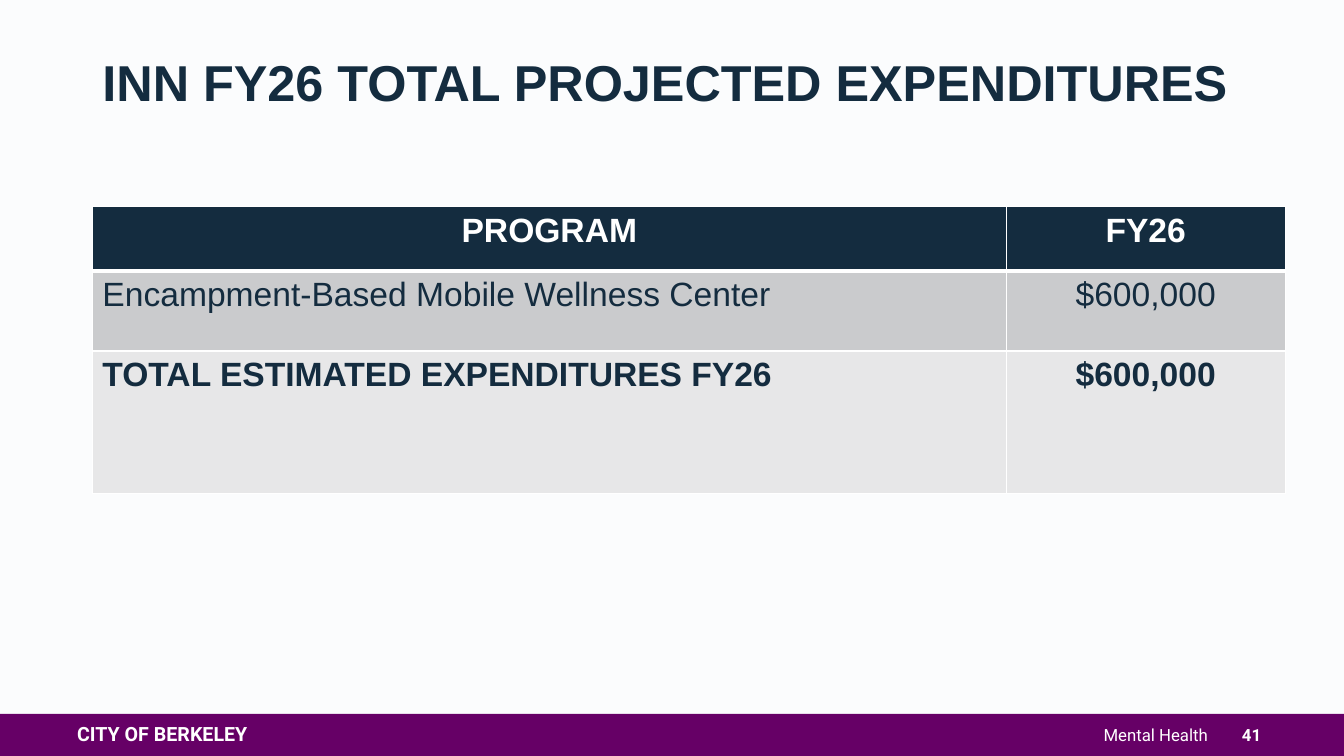
from dataclasses import dataclass

import lxml.etree
import pptx
import pptx.dml.color
import pptx.enum.shapes
import pptx.enum.text
import pptx.oxml.ns
import pptx.util

# The slide is a grid of 160 columns by 90 rows of square units.
UNIT = pptx.util.Inches(1) / 12
COLUMNS, ROWS = 160, 90

NAVY, PURPLE, WHITE = "142C3F", "660066", "FFFFFF"
BACKGROUND = "FBFCFD"
LEFT, CENTER, RIGHT = (
    pptx.enum.text.PP_ALIGN.LEFT,
    pptx.enum.text.PP_ALIGN.CENTER,
    pptx.enum.text.PP_ALIGN.RIGHT,
)
MIDDLE = pptx.enum.text.MSO_ANCHOR.MIDDLE
TOP = pptx.enum.text.MSO_ANCHOR.TOP


@dataclass(frozen=True)
class Box:
    """A rectangle in grid units."""
    col: float
    row: float
    width: float
    height: float

    def emu(self) -> tuple[int, ...]:
        return tuple(grid(n) for n in (self.col, self.row, self.width, self.height))


@dataclass(frozen=True)
class Style:
    size: float
    font: str = "Arial"
    color: str = NAVY
    bold: bool = False
    align: pptx.enum.text.PP_ALIGN = LEFT
    spacing: float = 1.0


@dataclass(frozen=True)
class Label:
    text: str
    box: Box
    style: Style


@dataclass(frozen=True)
class TableRow:
    program: str
    amount: str
    height: float
    fill: str
    color: str = NAVY
    bold: bool = False
    program_align: pptx.enum.text.PP_ALIGN = LEFT
    top_line: float = 1
    bottom_line: float = 1


TITLE = Label("INN FY26 TOTAL PROJECTED EXPENDITURES", Box(11, 6.25, 145.2, 14.75),
              Style(36, bold=True, spacing=0.9))
FOOTER_BAR = Box(0, 85, COLUMNS, 5)
FOOTER_LABELS = [
    Label("CITY OF BERKELEY", Box(8, 83.4, 30, 8.15),
          Style(14, "Roboto", WHITE, bold=True, spacing=0.9)),
    Label("Mental Health", Box(70, 83.6, 75, 8.15),
          Style(12, "Roboto", WHITE, align=RIGHT, spacing=0.9)),
    Label("41", Box(145, 85, 8, 5),
          Style(12, "Roboto", WHITE, bold=True, align=CENTER)),
]
TABLE_BOX = Box(11, 24.6, 142, 34.2)
TABLE_COLUMNS = (108.8, 33.2)
TABLE_ROWS = [
    TableRow("PROGRAM", "FY26", 7.7, NAVY, WHITE, True, CENTER, bottom_line=3),
    TableRow("Encampment-Based Mobile Wellness Center", "$600,000", 9.5, "CACBCD",
             top_line=3),
    TableRow("TOTAL ESTIMATED EXPENDITURES FY26", "$600,000", 17, "E7E7E8", bold=True),
]


def grid(units: float) -> int:
    return round(units * UNIT)


def rgb(value: str) -> pptx.dml.color.RGBColor:
    return pptx.dml.color.RGBColor.from_string(value)


def write(tf, text: str, style: Style) -> None:
    p = tf.paragraphs[0]
    p.text = text
    p.alignment = style.align
    p.line_spacing = style.spacing
    p.font.name = style.font
    p.font.size = pptx.util.Pt(style.size)
    p.font.bold = style.bold
    p.font.color.rgb = rgb(style.color)


def add_title(slide, label: Label) -> None:
    sp = slide.shapes.title
    sp.left, sp.top, sp.width, sp.height = label.box.emu()
    tf = sp.text_frame
    tf.auto_size = pptx.enum.text.MSO_AUTO_SIZE.NONE
    tf.vertical_anchor = TOP
    write(tf, label.text, label.style)


def add_label(slide, label: Label) -> None:
    tf = slide.shapes.add_textbox(*label.box.emu()).text_frame
    tf.word_wrap = True
    tf.vertical_anchor = MIDDLE
    write(tf, label.text, label.style)


def add_bar(slide, box: Box, color: str) -> None:
    sp = slide.shapes.add_shape(pptx.enum.shapes.MSO_SHAPE.RECTANGLE, *box.emu())
    sp.shadow.inherit = False
    sp.fill.solid()
    sp.fill.fore_color.rgb = rgb(color)
    sp.line.fill.background()


def set_borders(cell, top: float, bottom: float) -> None:
    """Draw white borders; must come before the cell's fill."""
    qn = pptx.oxml.ns.qn
    properties = cell._tc.get_or_add_tcPr()
    for side, width in (("L", 1), ("R", 1), ("T", top), ("B", bottom)):
        line = lxml.etree.SubElement(properties, qn(f"a:ln{side}"),
                                     w=str(pptx.util.Pt(width)))
        fill = lxml.etree.SubElement(line, qn("a:solidFill"))
        lxml.etree.SubElement(fill, qn("a:srgbClr"), val=WHITE)


def add_expenditures(slide, rows: list[TableRow]) -> None:
    table = slide.shapes.add_table(len(rows), len(TABLE_COLUMNS), *TABLE_BOX.emu()).table
    for column, width in zip(table.columns, TABLE_COLUMNS):
        column.width = grid(width)
    for i, row in enumerate(rows):
        table.rows[i].height = grid(row.height)
        contents = ((row.program, row.program_align), (row.amount, CENTER))
        for j, (text, align) in enumerate(contents):
            cell = table.cell(i, j)
            set_borders(cell, row.top_line, row.bottom_line)
            cell.fill.solid()
            cell.fill.fore_color.rgb = rgb(row.fill)
            write(cell.text_frame, text,
                  Style(24, color=row.color, bold=row.bold, align=align))


def main() -> None:
    prs = pptx.Presentation()
    prs.slide_width, prs.slide_height = grid(COLUMNS), grid(ROWS)
    slide = prs.slides.add_slide(prs.slide_layouts.get_by_name("Title Only"))
    slide.background.fill.solid()
    slide.background.fill.fore_color.rgb = rgb(BACKGROUND)
    add_bar(slide, FOOTER_BAR, PURPLE)
    for label in FOOTER_LABELS:
        add_label(slide, label)
    add_title(slide, TITLE)
    add_expenditures(slide, TABLE_ROWS)
    prs.save("out.pptx")


if __name__ == "__main__":
    main()
